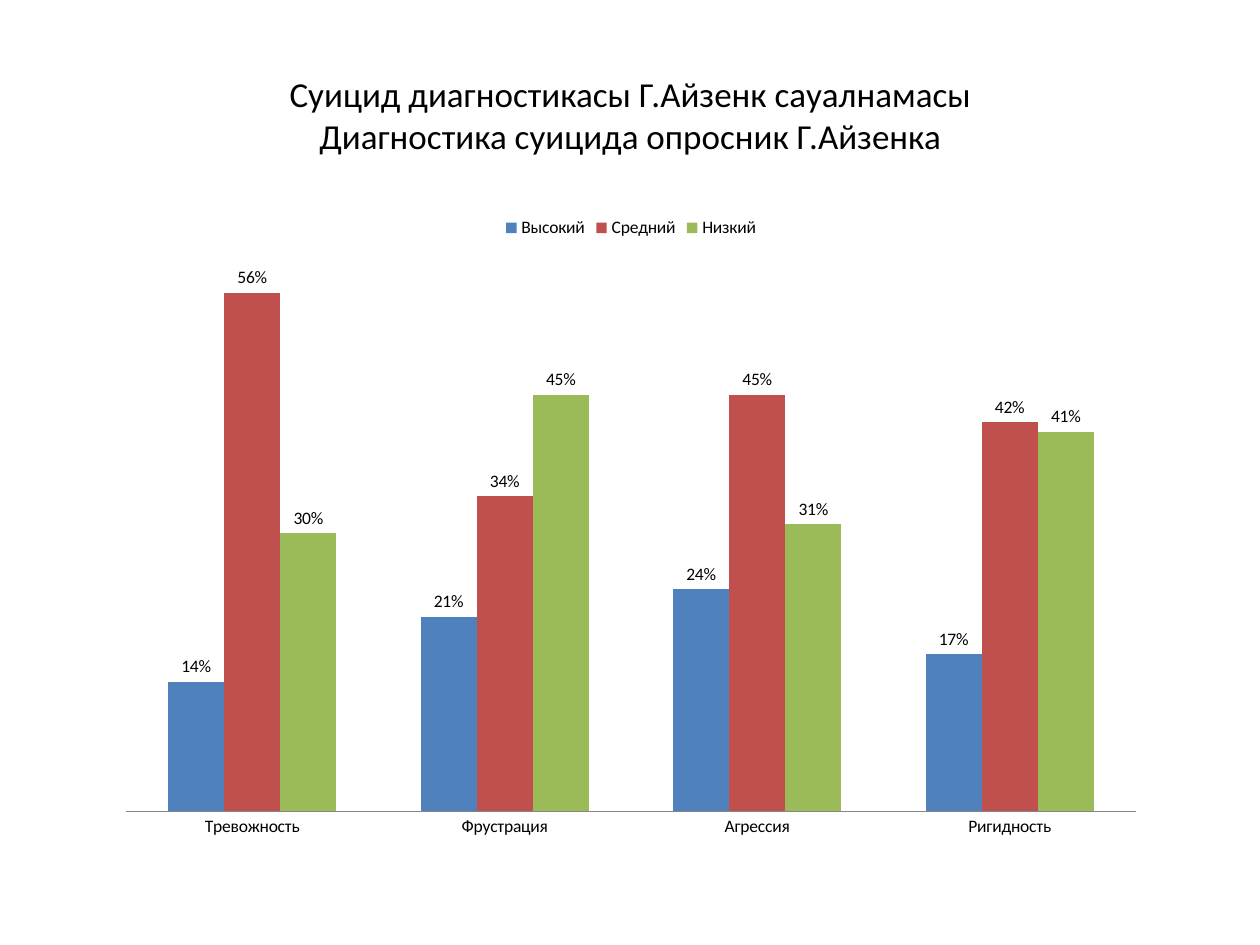
from pptx import Presentation
from pptx import util as u
from pptx.chart.data import CategoryChartData
from pptx.dml.color import RGBColor
from pptx.enum import chart as ch, text

SCALE = u.Inches(1) / 126
HUES = {"ink": "000000", "axis": "868686",
        "high": "4F81BD", "mid": "C0504D", "low": "9BBB59"}
CATS = ("Тревожность", "Фрустрация", "Агрессия", "Ригидность")
LEVELS = (
    ("Высокий", "high", (0.14, 0.21, 0.24, 0.17)),
    ("Средний", "mid", (0.56, 0.34, 0.45, 0.42)),
    ("Низкий", "low", (0.30, 0.45, 0.31, 0.41)),
)


def px(*vals):
    return [u.Emu(round(v * SCALE)) for v in vals]


def put(item, **vals):
    """Set several attributes of one object."""
    for name, val in vals.items():
        setattr(item, name, val)


class Deck:
    def __init__(self, wide, high):
        self.prs = Presentation()
        self.prs.slide_width, self.prs.slide_height = px(wide, high)
        self.face = "Calibri"
        self.slide = None

    def page(self):
        self.slide = self.prs.slides.add_slide(self.prs.slide_layouts[6])

    def hue(self, name):
        return RGBColor.from_string(HUES[name])

    def font(self, font, size):
        put(font, name=self.face, size=u.Pt(size), bold=False)
        font.color.rgb = self.hue("ink")

    def title(self, words, box, size):
        frame = self.slide.shapes.add_textbox(*px(*box)).text_frame
        put(frame, word_wrap=True, vertical_anchor=text.MSO_ANCHOR.MIDDLE)
        para = frame.paragraphs[0]
        put(para, text=words, alignment=text.PP_ALIGN.CENTER)
        for run in para.runs:
            self.font(run.font, size)

    def bars(self, cats, rows, box, size):
        data = CategoryChartData(number_format="0%")
        data.categories = cats
        for name, _, vals in rows:
            data.add_series(name, vals)
        kind = ch.XL_CHART_TYPE.COLUMN_CLUSTERED
        chart = self.slide.shapes.add_chart(kind, *px(*box), data).chart
        put(chart, has_title=False, has_legend=True)
        self.font(chart.font, size)
        put(chart.legend, position=ch.XL_LEGEND_POSITION.TOP,
            include_in_layout=False)

        tick = ch.XL_TICK_MARK.NONE
        axis = chart.category_axis
        put(axis, major_tick_mark=tick, minor_tick_mark=tick)
        axis.format.line.color.rgb = self.hue("axis")
        put(chart.value_axis, visible=False, has_major_gridlines=False,
            minimum_scale=0, maximum_scale=0.6)

        plot = chart.plots[0]
        put(plot, gap_width=150, overlap=0, vary_by_categories=False)
        for ser, (_, hue, _) in zip(plot.series, rows):
            ser.format.fill.solid()
            ser.format.fill.fore_color.rgb = self.hue(hue)
            ser.invert_if_negative = False
            put(ser.data_labels, show_value=True, number_format="0%",
                number_format_is_linked=False,
                position=ch.XL_LABEL_POSITION.OUTSIDE_END)
            self.font(ser.data_labels.font, size)


def main():
    deck = Deck(1260, 945)
    deck.page()
    deck.title("Суицид диагностикасы Г.Айзенк сауалнамасы\v"
               "Диагностика суицида опросник Г.Айзенка",
               (95, 55, 1071, 118), 20)
    deck.bars(CATS, LEVELS, (105, 204, 1052, 645), 10)
    deck.prs.save("out.pptx")


if __name__ == "__main__":
    main()
